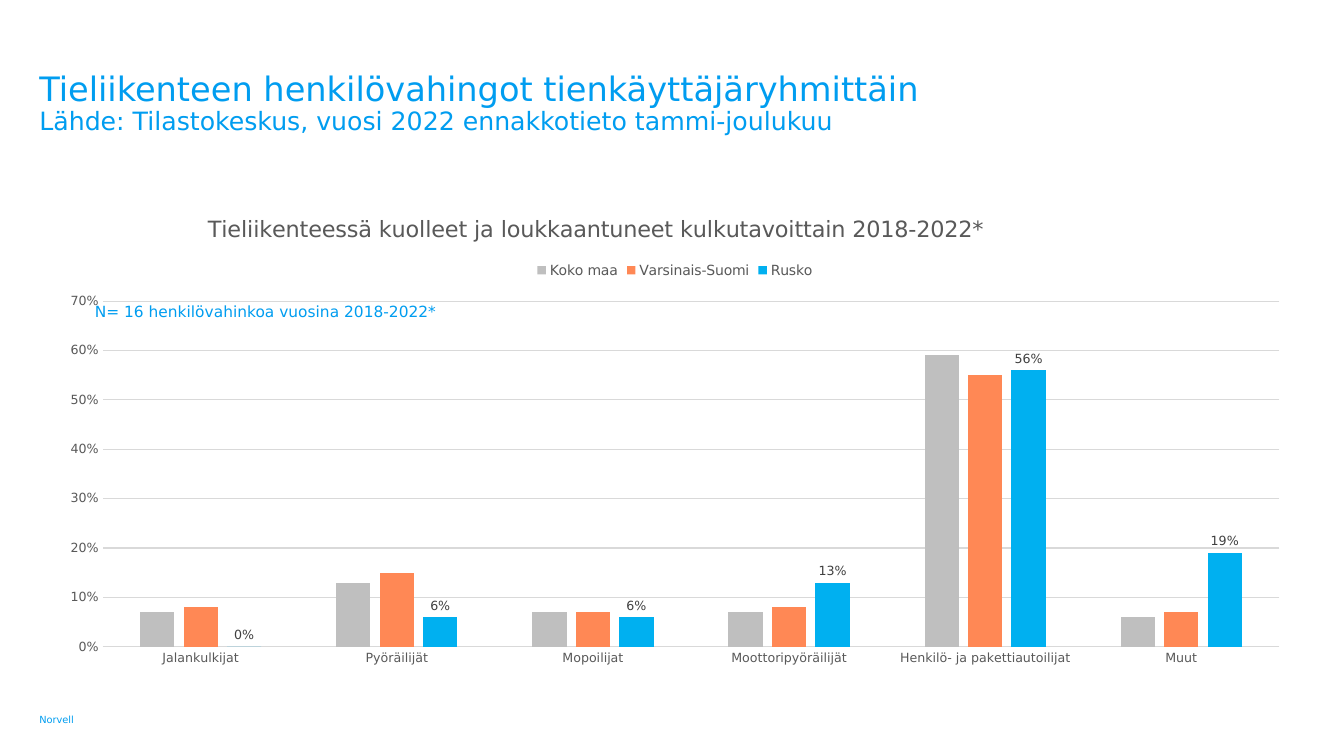
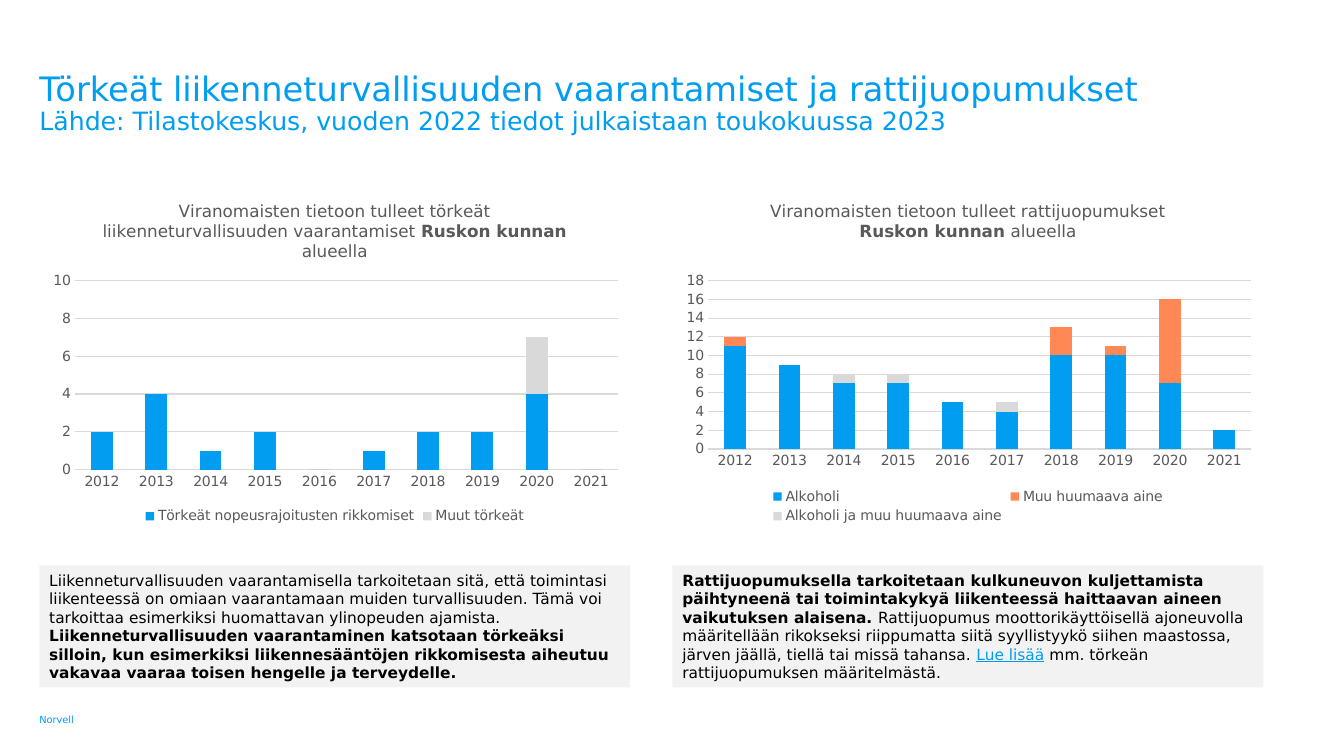
from lxml import etree
from pptx import Presentation
from pptx.chart.data import CategoryChartData
from pptx.dml.color import RGBColor
from pptx.enum.chart import XL_CHART_TYPE, XL_LABEL_POSITION, XL_LEGEND_POSITION, XL_TICK_MARK
from pptx.enum.shapes import MSO_SHAPE
from pptx.enum.text import MSO_ANCHOR, MSO_AUTO_SIZE, PP_ALIGN
from pptx.oxml.ns import qn
from pptx.util import Inches, Pt

CLUSTERED = XL_CHART_TYPE.COLUMN_CLUSTERED
STACKED = XL_CHART_TYPE.COLUMN_STACKED
LEGEND_TOP = XL_LEGEND_POSITION.TOP
LEGEND_BOTTOM = XL_LEGEND_POSITION.BOTTOM
OUTSIDE_END = XL_LABEL_POSITION.OUTSIDE_END
NO_TICK = XL_TICK_MARK.NONE
RECTANGLE = MSO_SHAPE.RECTANGLE
LEFT = PP_ALIGN.LEFT
TOP, MIDDLE, BOTTOM = MSO_ANCHOR.TOP, MSO_ANCHOR.MIDDLE, MSO_ANCHOR.BOTTOM

FONT = "DejaVu Sans"
BLUE = RGBColor(0x00, 0x9D, 0xF0)
SKY = RGBColor(0x00, 0xB0, 0xF0)
ORANGE = RGBColor(0xFF, 0x88, 0x55)
MID_GREY = RGBColor(0xBF, 0xBF, 0xBF)
LIGHT_GREY = RGBColor(0xD9, 0xD9, 0xD9)
PANEL_GREY = RGBColor(0xF2, 0xF2, 0xF2)
AXIS_GREY = RGBColor(0x59, 0x59, 0x59)
LABEL_GREY = RGBColor(0x40, 0x40, 0x40)
BLACK = RGBColor(0x00, 0x00, 0x00)

MARGIN = 0.39
TITLE_BOX = (MARGIN, 0.72, 11.46, 1.02)
FOOTER_BOX = (MARGIN, 6.96, 0.85, 0.24)
COLUMN_LEFTS = (MARGIN, 6.67)
COLUMN_WIDTH = 5.86
YEARS = [str(year) for year in range(2012, 2022)]


def style_font(font, size, color, bold=False, underline=False):
    font.name = FONT
    font.size = Pt(size)
    font.color.rgb = color
    font.bold = bold
    font.underline = underline


def add_text(paragraph, text, size=11, color=BLACK, **emphasis):
    run = paragraph.add_run()
    run.text = text
    style_font(run.font, size, color, **emphasis)


def move(shape, box):
    shape.left, shape.top, shape.width, shape.height = map(Inches, box)


def clear_insets(frame):
    frame.margin_left = frame.margin_right = frame.margin_top = frame.margin_bottom = 0


def add_text_box(slide, box, text, anchor=TOP, wrap=True, **text_format):
    frame = slide.shapes.add_textbox(*map(Inches, box)).text_frame
    clear_insets(frame)
    frame.word_wrap = wrap
    frame.vertical_anchor = anchor
    add_text(frame.paragraphs[0], text, **text_format)


def new_slide(presentation, heading, source):
    """Add a slide with the shared two-line title and footer."""
    slide = presentation.slides.add_slide(presentation.slide_layouts[5])
    title = slide.shapes.title
    move(title, TITLE_BOX)
    frame = title.text_frame
    clear_insets(frame)
    frame.word_wrap = True
    frame.auto_size = MSO_AUTO_SIZE.NONE
    frame.vertical_anchor = TOP
    paragraph = frame.paragraphs[0]
    paragraph.alignment = LEFT
    paragraph.line_spacing = 0.9
    add_text(paragraph, heading, size=24, color=BLUE)
    paragraph.add_line_break()
    add_text(paragraph, source, size=18, color=BLUE)
    add_text_box(slide, FOOTER_BOX, "Norvell", anchor=BOTTOM, size=7, color=BLUE)
    return slide


def set_layout(part, **fractions):
    """Fix a chart part at x, y (and w, h) given as fractions of the chart."""
    old = part.find(qn("c:layout"))
    if old is not None:
        part.remove(old)
    layout = etree.Element(qn("c:layout"))
    manual = etree.SubElement(layout, qn("c:manualLayout"))
    if part.tag == qn("c:plotArea"):
        etree.SubElement(manual, qn("c:layoutTarget"), val="inner")
    for side in "xy":
        etree.SubElement(manual, qn(f"c:{side}Mode"), val="edge")
    for key, value in fractions.items():
        etree.SubElement(manual, qn(f"c:{key}"), val=str(value))
    overlay = part.find(qn("c:overlay"))
    if overlay is None:
        part.insert(0, layout)
    else:
        overlay.addprevious(layout)


def style_axes(chart, size, number_format, maximum, step):
    for axis in (chart.category_axis, chart.value_axis):
        axis.major_tick_mark = axis.minor_tick_mark = NO_TICK
        style_font(axis.tick_labels.font, size, AXIS_GREY)
    category_line = chart.category_axis.format.line
    values = chart.value_axis
    values.format.line.fill.background()
    values.has_major_gridlines = True
    for line in (category_line, values.major_gridlines.format.line):
        line.color.rgb = LIGHT_GREY
        line.width = Pt(0.75)
    values.minimum_scale, values.maximum_scale, values.major_unit = 0, maximum, step
    values.tick_labels.number_format = number_format
    values.tick_labels.number_format_is_linked = False


def add_column_chart(slide, box, kind, categories, series, title_runs, plot_box, *,
                     title_size, axis_size, gap, overlap, legend_position,
                     number_format, maximum, step):
    """series: (name, colour, values); title_runs: (text, bold)."""
    data = CategoryChartData(number_format=number_format)
    data.categories = categories
    for name, _, values in series:
        data.add_series(name, values)
    chart = slide.shapes.add_chart(kind, *map(Inches, box), data).chart
    style_font(chart.font, 10, BLACK)

    chart.has_title = True
    paragraph = chart.chart_title.text_frame.paragraphs[0]
    for text, bold in title_runs:
        add_text(paragraph, text, size=title_size, color=AXIS_GREY, bold=bold)

    chart.has_legend = True
    chart.legend.position = legend_position
    chart.legend.include_in_layout = False
    style_font(chart.legend.font, 10, AXIS_GREY)

    plot = chart.plots[0]
    plot.gap_width, plot.overlap = gap, overlap
    plot.vary_by_categories = False
    for columns, (_, color, _) in zip(plot.series, series):
        columns.format.fill.solid()
        columns.format.fill.fore_color.rgb = color
        columns.invert_if_negative = False
    style_axes(chart, axis_size, number_format, maximum, step)
    set_layout(chart.element.xpath(".//c:plotArea")[0], **dict(zip("xywh", plot_box)))
    return chart


def add_panel(slide, box, runs):
    """Add a grey explanation panel; runs: (text, format)."""
    panel = slide.shapes.add_shape(RECTANGLE, *map(Inches, box))
    panel.shadow.inherit = False
    panel.fill.solid()
    panel.fill.fore_color.rgb = PANEL_GREY
    panel.line.fill.background()
    frame = panel.text_frame
    frame.word_wrap = True
    frame.vertical_anchor = MIDDLE
    paragraph = frame.paragraphs[0]
    paragraph.alignment = LEFT
    for text, text_format in runs:
        add_text(paragraph, text, **text_format)


def add_injury_slide(presentation):
    slide = new_slide(presentation, "Tieliikenteen henkilövahingot tienkäyttäjäryhmittäin",
                      "Lähde: Tilastokeskus, vuosi 2022 ennakkotieto tammi-joulukuu")
    road_users = ["Jalankulkijat", "Pyöräilijät", "Mopoilijat", "Moottoripyöräilijät",
                  "Henkilö- ja pakettiautoilijat", "Muut"]
    regions = [
        ("Koko maa", MID_GREY, (0.07, 0.13, 0.07, 0.07, 0.59, 0.06)),
        ("Varsinais-Suomi", ORANGE, (0.08, 0.15, 0.07, 0.08, 0.55, 0.07)),
        ("Rusko", SKY, (0, 0.06, 0.06, 0.13, 0.56, 0.19)),
    ]
    title = [("Tieliikenteessä kuolleet ja loukkaantuneet kulkutavoittain 2018-2022*", False)]
    chart = add_column_chart(
        slide, (MARGIN, 2, 12.55, 4.7), CLUSTERED, road_users, regions, title,
        (0.05, 0.21, 0.93, 0.73), title_size=16, axis_size=9, gap=219, overlap=-27,
        legend_position=LEGEND_TOP, number_format="0%", maximum=0.7, step=0.1)
    set_layout(chart.element.xpath(".//c:chart/c:title")[0], x=0.13, y=0.02)
    set_layout(chart.element.xpath(".//c:legend")[0], x=0.39, y=0.12)

    labels = chart.plots[0].series[-1].data_labels
    labels.show_value = True
    labels.position = OUTSIDE_END
    labels.number_format = "0%"
    labels.number_format_is_linked = False
    style_font(labels.font, 9, LABEL_GREY)
    add_text_box(slide, (0.94, 3, 3.46, 0.19), "N= 16 henkilövahinkoa vuosina 2018-2022*",
                 wrap=False, color=BLUE)


def add_offence_column(slide, left, series, title, plot_box, maximum, explanation):
    """Place a yearly chart with its explanation below it."""
    add_column_chart(
        slide, (left, 1.83, COLUMN_WIDTH, 3.41), STACKED, YEARS, series, title, plot_box,
        title_size=12, axis_size=10, gap=150, overlap=100, legend_position=LEGEND_BOTTOM,
        number_format="0", maximum=maximum, step=2)
    add_panel(slide, (left, 5.61, COLUMN_WIDTH, 1.21), explanation)


def add_offence_slide(presentation):
    slide = new_slide(
        presentation, "Törkeät liikenneturvallisuuden vaarantamiset ja rattijuopumukset",
        "Lähde: Tilastokeskus, vuoden 2022 tiedot julkaistaan toukokuussa 2023")
    endangerment = [
        ("Törkeät nopeusrajoitusten rikkomiset", BLUE, (2, 4, 1, 2, 0, 1, 2, 2, 4, 0)),
        ("Muut törkeät", LIGHT_GREY, (0, 0, 0, 0, 0, 0, 0, 0, 3, 0)),
    ]
    drunk_driving = [
        ("Alkoholi", BLUE, (11, 9, 7, 7, 5, 4, 10, 10, 7, 2)),
        ("Muu huumaava aine", ORANGE, (1, 0, 0, 0, 0, 0, 3, 1, 9, 0)),
        ("Alkoholi ja muu huumaava aine", LIGHT_GREY, (0, 0, 1, 1, 0, 1, 0, 0, 0, 0)),
    ]
    area = [("Ruskon kunnan", True), (" alueella", False)]
    endangerment_title = [("Viranomaisten tietoon tulleet törkeät "
                           "liikenneturvallisuuden vaarantamiset ", False)] + area
    drunk_title = [("Viranomaisten tietoon tulleet rattijuopumukset ", False)] + area
    endangerment_text = [
        ("Liikenneturvallisuuden vaarantamisella tarkoitetaan sitä, että toimintasi "
         "liikenteessä on omiaan vaarantamaan muiden turvallisuuden. Tämä voi tarkoittaa "
         "esimerkiksi huomattavan ylinopeuden ajamista. ", {}),
        ("Liikenneturvallisuuden vaarantaminen katsotaan törkeäksi silloin, kun esimerkiksi "
         "liikennesääntöjen rikkomisesta aiheutuu vakavaa vaaraa toisen hengelle ja "
         "terveydelle.", {"bold": True}),
    ]
    drunk_text = [
        ("Rattijuopumuksella tarkoitetaan kulkuneuvon kuljettamista päihtyneenä tai "
         "toimintakykyä liikenteessä haittaavan aineen vaikutuksen alaisena. ", {"bold": True}),
        ("Rattijuopumus moottorikäyttöisellä ajoneuvolla määritellään rikokseksi riippumatta "
         "siitä syyllistyykö siihen maastossa, järven jäällä, tiellä tai missä tahansa. ", {}),
        ("Lue lisää", {"color": BLUE, "underline": True}),
        (" mm. törkeän rattijuopumuksen määritelmästä.", {}),
    ]
    left, right = COLUMN_LEFTS
    add_offence_column(slide, left, endangerment, endangerment_title,
                       (0.06, 0.28, 0.92, 0.55), 10, endangerment_text)
    add_offence_column(slide, right, drunk_driving, drunk_title,
                       (0.06, 0.28, 0.92, 0.49), 18, drunk_text)


def main():
    presentation = Presentation()
    presentation.slide_width, presentation.slide_height = Inches(13.33), Inches(7.5)
    add_injury_slide(presentation)
    add_offence_slide(presentation)
    presentation.save("out.pptx")


if __name__ == "__main__":
    main()
